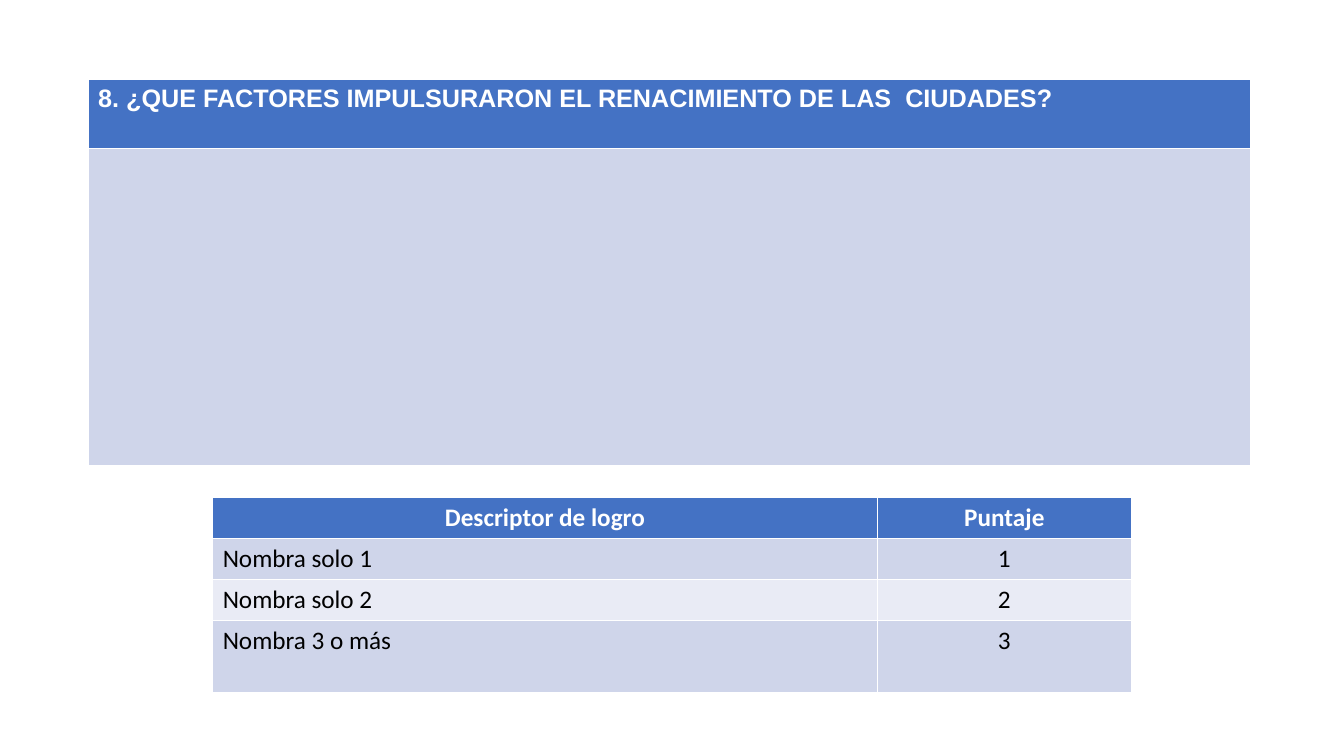
"""Build a slide with an open question and its scoring rubric."""
from pptx import Presentation
from pptx.dml.color import RGBColor
from pptx.enum.text import PP_ALIGN
from pptx.util import Cm, Pt

BLUE = RGBColor(0x44, 0x72, 0xC4)
LIGHT_BLUE = RGBColor(0xCF, 0xD5, 0xEA)
PALE_BLUE = RGBColor(0xE9, 0xEB, 0xF5)
WHITE = RGBColor(0xFF, 0xFF, 0xFF)
BLACK = RGBColor(0x00, 0x00, 0x00)


def add_grid(page, left, top, widths, heights, rows, font_name):
    frame = page.shapes.add_table(len(rows), len(widths), Cm(left), Cm(top),
                                  Cm(sum(widths)), Cm(sum(heights)))
    table = frame.table
    for column, width in zip(table.columns, widths):
        column.width = Cm(width)
    for row_index, (row, height, texts) in enumerate(zip(table.rows, heights, rows)):
        row.height = Cm(height)
        is_header = row_index == 0
        band = LIGHT_BLUE if row_index % 2 else PALE_BLUE
        for cell, text in zip(row.cells, texts):
            cell.fill.solid()
            cell.fill.fore_color.rgb = BLUE if is_header else band
            cell.text = text
            font = cell.text_frame.paragraphs[0].font
            font.name = font_name
            font.size = Pt(18)
            font.bold = is_header
            font.color.rgb = WHITE if is_header else BLACK
    # banding alternates from the first body row
    for row_index in range(3, len(rows), 2):
        for cell in table.rows[row_index].cells:
            cell.fill.fore_color.rgb = LIGHT_BLUE
    return table


deck = Presentation()
deck.slide_width = Cm(33.87)
deck.slide_height = Cm(19.05)
page = deck.slides.add_slide(deck.slide_layouts[6])

question = "8. ¿QUE FACTORES IMPULSURARON EL RENACIMIENTO DE LAS  CIUDADES?"
add_grid(page, 2.22, 2.01, [29.3], [1.73, 8], [[question], [""]], "Arial")

rubric_rows = [
    ["Descriptor de logro", "Puntaje"],
    ["Nombra solo 1", "1"],
    ["Nombra solo 2", "2"],
    ["Nombra 3 o más", "3"],
]
rubric = add_grid(page, 5.36, 12.54, [16.75, 6.4], [1.02, 1.02, 1.02, 1.81],
                  rubric_rows, "Calibri")
centred_cells = [rubric.cell(0, 0)] + [row.cells[1] for row in rubric.rows]
for cell in centred_cells:
    cell.text_frame.paragraphs[0].alignment = PP_ALIGN.CENTER

deck.save("out.pptx")
